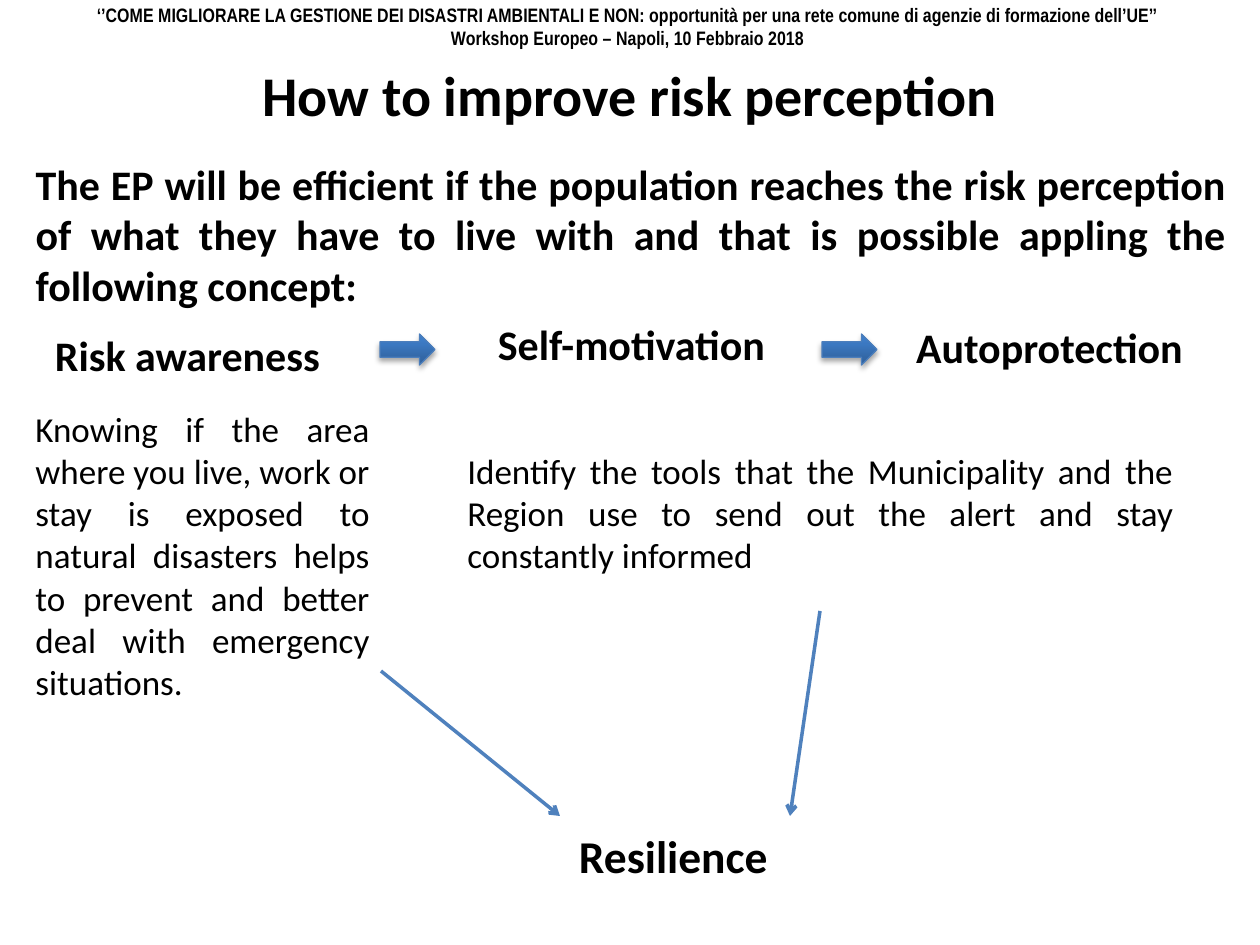
from dataclasses import dataclass

from lxml.etree import SubElement
from pptx import Presentation
from pptx.dml.color import RGBColor
from pptx.enum.shapes import MSO_CONNECTOR, MSO_SHAPE
from pptx.enum.text import MSO_ANCHOR, MSO_AUTO_SIZE, PP_ALIGN
from pptx.oxml.ns import qn
from pptx.util import Pt

SCALE = 914400 / 126


@dataclass(frozen=True)
class Theme:
    text: RGBColor = RGBColor.from_string("000000")
    arrow_dark: RGBColor = RGBColor.from_string("2F5F99")
    arrow_light: RGBColor = RGBColor.from_string("3D7CC7")
    arrow_edge: RGBColor = RGBColor.from_string("4B7EBC")
    link: RGBColor = RGBColor.from_string("4F81BD")
    font: str = "Calibri"
    header_font: str = "Arial Narrow"
    header_size: float = 11.1
    title_size: int = 32
    concept_size: int = 24
    outcome_size: int = 26
    detail_size: int = 20


THEME = Theme()

TITLE = "How to improve risk perception"
INTRO = (
    "The EP will be efficient if the population reaches the risk perception of what "
    "they have to live with and that is possible appling the following concept:"
)
HEADER = [
    "‘’COME MIGLIORARE LA GESTIONE DEI DISASTRI AMBIENTALI E NON: opportunità per "
    "una rete comune di agenzie di formazione dell’UE’’",
    "Workshop Europeo – Napoli, 10 Febbraio 2018",
]
CONCEPTS = [
    ("Risk awareness", (0, 323, 375, 62), THEME.concept_size),
    ("Self-motivation", (473, 312, 317, 60), THEME.concept_size),
    ("Autoprotection", (896, 315, 307, 68), THEME.concept_size),
    ("Resilience", (525, 822, 297, 69), THEME.outcome_size),
]
DETAILS = [
    ("Knowing if the area where you live, work or stay is exposed to natural disasters "
     "helps to prevent and better deal with emergency situations.", (23, 386, 359, 338)),
    ("Identify the tools that the Municipality and the Region use to send out the alert "
     "and stay constantly informed", (455, 383, 731, 258)),
]
STEP_ARROWS = [(380, 334, 55, 31), (822, 334, 55, 31)]
OUTCOME_LINKS = [(381, 671, 560, 816), (820, 611, 790, 816)]


def emu(lengths):
    return [round(length * SCALE) for length in lengths]


def write(shape, lines, size, align, anchor=MSO_ANCHOR.TOP, bold=True,
          font=THEME.font, spacing=0.2):
    frame = shape.text_frame
    frame.word_wrap = True
    frame.auto_size = MSO_AUTO_SIZE.NONE
    frame.vertical_anchor = anchor
    frame.text = "\n".join(lines)
    for paragraph in frame.paragraphs:
        paragraph.alignment = align
        paragraph.space_before = Pt(size * spacing)
        paragraph.font.name = font
        paragraph.font.size = Pt(size)
        paragraph.font.bold = bold
        paragraph.font.color.rgb = THEME.text


def place(placeholder, box):
    placeholder.left, placeholder.top, placeholder.width, placeholder.height = emu(box)
    return placeholder


def remove_bullets(shape):
    for paragraph in shape.text_frame.paragraphs:
        properties = paragraph._p.get_or_add_pPr()
        properties.set("marL", "0")
        properties.set("indent", "0")
        bullet = SubElement(properties, qn("a:buNone"))
        properties.find(qn("a:defRPr")).addprevious(bullet)


def add_step_arrow(slide, box):
    arrow = slide.shapes.add_shape(MSO_SHAPE.RIGHT_ARROW, *emu(box))
    arrow.fill.gradient()
    arrow.fill.gradient_angle = 90
    dark, light = arrow.fill.gradient_stops
    dark.color.rgb, dark.position = THEME.arrow_dark, 0
    light.color.rgb, light.position = THEME.arrow_light, 0.8
    arrow.line.color.rgb = THEME.arrow_edge
    arrow.line.width = Pt(0.75)
    arrow.shadow.inherit = False
    effects = arrow._element.spPr.find(qn("a:effectLst"))
    shadow = SubElement(effects, qn("a:outerShdw"), blurRad=str(Pt(3.1)),
                        dist=str(Pt(1.8)), dir="5400000", rotWithShape="0")
    tone = SubElement(shadow, qn("a:srgbClr"), val=str(THEME.text))
    SubElement(tone, qn("a:alpha"), val="35000")


def add_outcome_link(slide, ends):
    link = slide.shapes.add_connector(MSO_CONNECTOR.STRAIGHT, *emu(ends))
    link.line.color.rgb = THEME.link
    link.line.width = Pt(2)
    SubElement(link.line._get_or_add_ln(), qn("a:tailEnd"), type="arrow")
    SubElement(link._element.spPr, qn("a:effectLst"))


def main():
    deck = Presentation()
    deck.slide_width, deck.slide_height = emu((1260, 945))
    slide = deck.slides.add_slide(deck.slide_layouts[1])

    title = place(slide.shapes.title, (0, 54, 1260, 79))
    write(title, [TITLE], THEME.title_size, PP_ALIGN.CENTER)
    intro = place(slide.placeholders[1], (23, 130, 1216, 208))
    write(intro, [INTRO], THEME.concept_size, PP_ALIGN.JUSTIFY, MSO_ANCHOR.MIDDLE)
    remove_bullets(intro)

    for concept, box, size in CONCEPTS:
        write(slide.shapes.add_textbox(*emu(box)), [concept], size, PP_ALIGN.CENTER)
    for box in STEP_ARROWS:
        add_step_arrow(slide, box)
    for ends in OUTCOME_LINKS:
        add_outcome_link(slide, ends)

    header = slide.shapes.add_textbox(*emu((-5, 0, 1265, 53)))
    write(header, HEADER, THEME.header_size, PP_ALIGN.CENTER, MSO_ANCHOR.MIDDLE,
          font=THEME.header_font, spacing=0)
    for detail, box in DETAILS:
        write(slide.shapes.add_textbox(*emu(box)), [detail], THEME.detail_size,
              PP_ALIGN.JUSTIFY, MSO_ANCHOR.MIDDLE, bold=False)

    deck.save("out.pptx")


if __name__ == "__main__":
    main()
